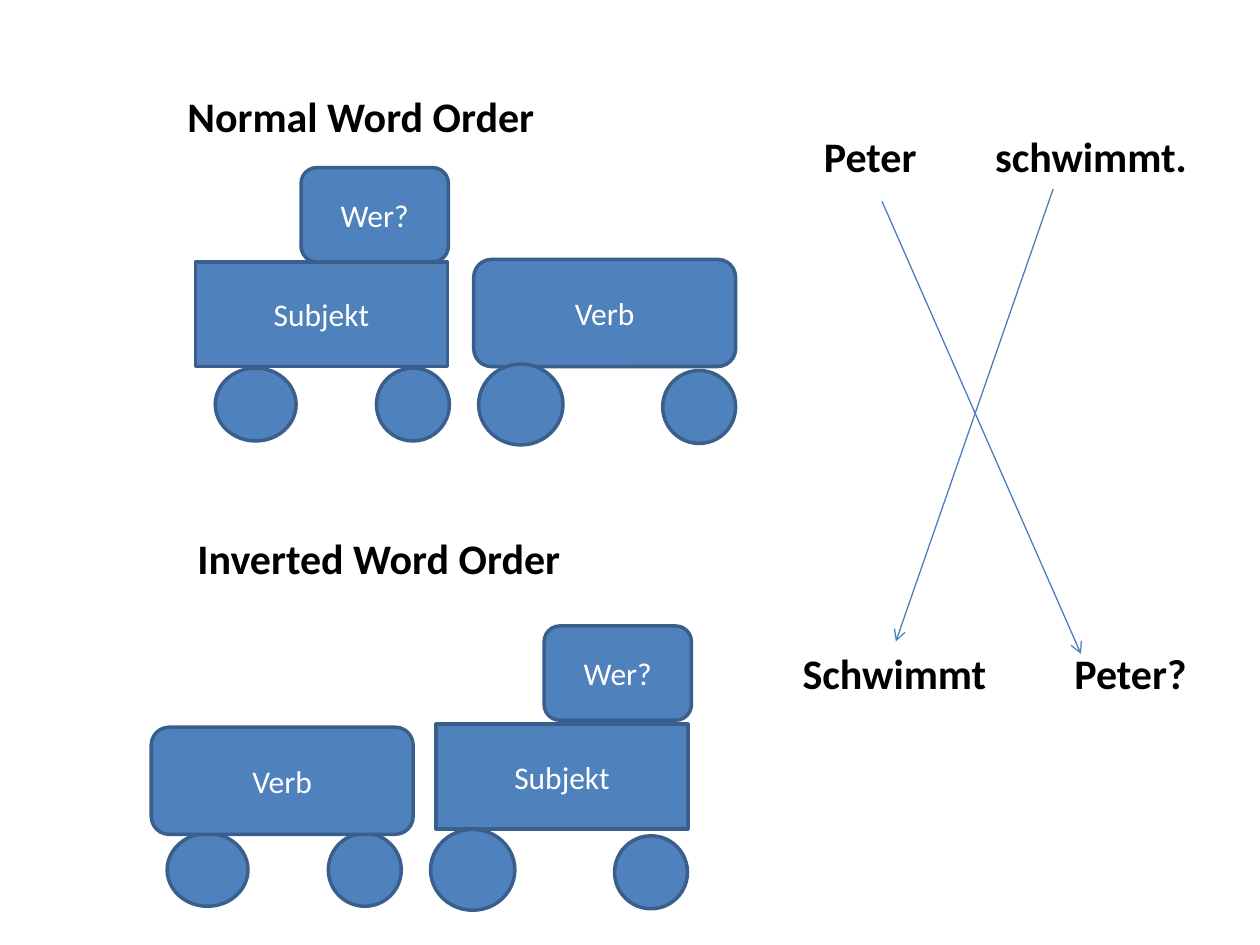
from lxml import etree
from pptx import Presentation
from pptx import util as u
from pptx.dml.color import RGBColor
from pptx.enum import shapes, text
from pptx.oxml.ns import qn

COLORS = {"fill": "4F81BD", "outline": "3A5F8C", "arrow": "4B7EBC",
          "label": "FFFFFF", "text": "000000"}
RECT = shapes.MSO_SHAPE.RECTANGLE
ROUND = shapes.MSO_SHAPE.ROUNDED_RECTANGLE
WHEEL = shapes.MSO_SHAPE.OVAL

prs = Presentation()
prs.slide_width, prs.slide_height = u.Cm(25.4), u.Cm(19.05)
s = prs.slides.add_slide(prs.slide_layouts[6])


def add_part(kind, x, y, w, h, label=""):
    """Add one blue piece of a train, with a centred label if given."""
    sp = s.shapes.add_shape(kind, u.Cm(x), u.Cm(y), u.Cm(w), u.Cm(h))
    sp.shadow.inherit = False
    sp.fill.solid()
    sp.fill.fore_color.rgb = RGBColor.from_string(COLORS["fill"])
    sp.line.color.rgb = RGBColor.from_string(COLORS["outline"])
    sp.line.width = u.Pt(2)
    if label:
        sp.text_frame.vertical_anchor = text.MSO_ANCHOR.MIDDLE
        p = sp.text_frame.paragraphs[0]
        p.text = label
        p.alignment = text.PP_ALIGN.CENTER
        p.font.name, p.font.size = "Calibri", u.Pt(18)
        p.font.color.rgb = RGBColor.from_string(COLORS["label"])


def add_bold_text(wording, x, y, w, wrap):
    tf = s.shapes.add_textbox(u.Cm(x), u.Cm(y), u.Cm(w), u.Cm(1.27)).text_frame
    tf.word_wrap = wrap
    tf.auto_size = text.MSO_AUTO_SIZE.SHAPE_TO_FIT_TEXT
    p = tf.paragraphs[0]
    p.text = wording
    p.font.name, p.font.size, p.font.bold = "Calibri", u.Pt(24), True
    p.font.color.rgb = RGBColor.from_string(COLORS["text"])


# Each train: title, subject, cab and verb positions, and shift of its wheels
trains = [
    ("Normal Word Order", (3.53, 1.7), (3.94, 5.28), (6.07, 3.38), (9.55, 5.23), (0, 0)),
    ("Inverted Word Order", (3.73, 10.62), (8.79, 14.6), (10.97, 12.62), (3.05, 14.66), (-0.97, 9.38)),
]
left_wheels = [(7.59, 7.42, 1.47, 1.47), (4.34, 7.42, 1.63, 1.47)]
right_wheels = [(13.36, 7.47, 1.47, 1.47), (9.65, 7.34, 1.7, 1.63)]

for title, title_at, subject_at, cab_at, verb_at, (dx, dy) in trains:
    add_part(RECT, *subject_at, 5.08, 2.11, "Subjekt")
    add_part(ROUND, *cab_at, 2.97, 1.9, "Wer?")
    for x, y, w, h in left_wheels:
        add_part(WHEEL, x + dx, y + dy, w, h)
    add_part(ROUND, *verb_at, 5.28, 2.16, "Verb")
    for x, y, w, h in right_wheels:
        add_part(WHEEL, x + dx, y + dy, w, h)
    add_bold_text(title, *title_at, 10.36, True)

# Crossing arrows show subject and verb changing places
for ends in [(17.78, 4.06, 21.79, 13.18), (21.23, 3.81, 18.06, 12.93)]:
    arrow = s.shapes.add_connector(shapes.MSO_CONNECTOR.STRAIGHT, *map(u.Cm, ends))
    arrow.line.color.rgb = RGBColor.from_string(COLORS["arrow"])
    arrow.line.width = u.Pt(0.75)
    etree.SubElement(arrow.line._get_or_add_ln(), qn("a:tailEnd"), type="arrow")
    etree.SubElement(arrow._element.spPr, qn("a:effectLst"))

for word, x, y, w in [("Peter?", 21.41, 12.93, 2.79), ("Schwimmt", 15.93, 12.93, 4.24),
                      ("Peter", 16.36, 2.51, 2.59), ("schwimmt.", 19.81, 2.51, 4.42)]:
    add_bold_text(word, x, y, w, False)

prs.save("out.pptx")
